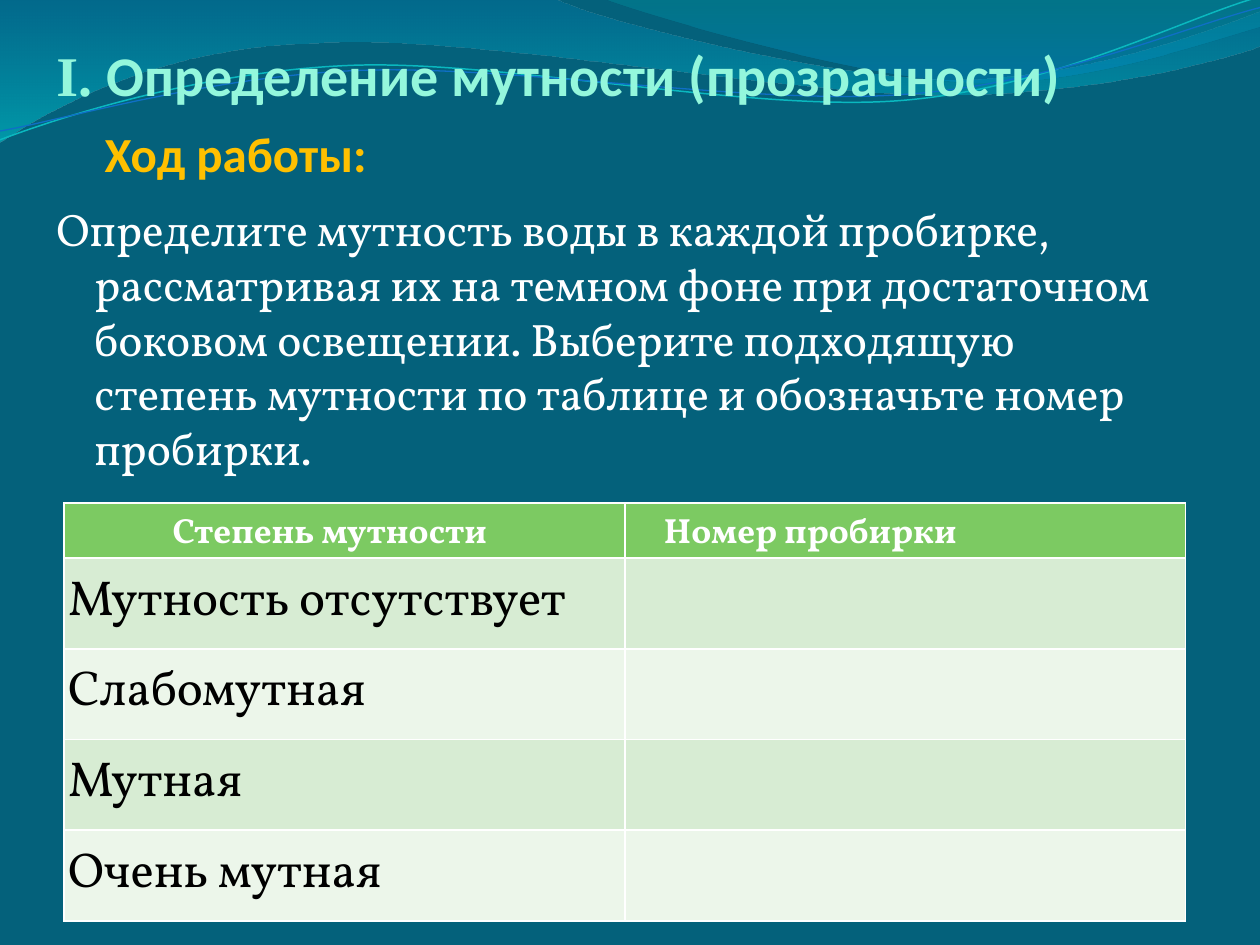
from lxml.etree import SubElement
from pptx import Presentation
from pptx.dml.color import RGBColor
from pptx.enum.text import MSO_ANCHOR as Anchor
from pptx.oxml import parse_xml
from pptx.oxml.ns import nsdecls, qn
from pptx.util import Inches, Pt

COLORS = {
    "background": "04617B", "white": "FFFFFF", "black": "000000",
    "mint": "94F7DC", "amber": "FFC000", "header": "7CCA62",
    "band_dark": "D7ECD3", "band_light": "ECF6EA",
    "wave_blue": "0074A1", "wave_cyan": "00C6CF",
    "wave_teal": "00A1A9", "wave_sky": "008BBF",
    "line_teal": "0AB8BF", "line_blue": "0F6FC6",
}
SERIF = "Vollkorn"
SANS = "Calibri"

LEFT_WAVE = [
    [(0, 0)], [(4.4, -0.01)],
    [(4.76, 0.17), (6.64, 0.63), (7.58, 0.63)],
    [(8.53, 0.63), (9.58, 0.26), (10, 0.09)],
    [(10.01, 0.36)],
    [(9.83, 0.44), (8.7, 0.76), (7.46, 0.75)],
    [(6.22, 0.75), (3.82, 0.28), (2.57, 0.34)],
    [(1.29, 0.36), (0.46, 0.83), (-0.01, 1.13)],
    [(0, 0)],
]
RIGHT_WAVE = [
    [(4.79, -0.01)],
    [(5.09, 0.11), (6.82, 0.62), (7.69, 0.65)],
    [(8.56, 0.69), (9.61, 0.32), (10, 0.21)],
    [(10, 0)], [(4.79, -0.01)],
]
TEAL_LINE = [
    [(0, 1.11)],
    [(0.48, 0.93), (1.58, 0.57), (2.77, 0.52)],
    [(3.95, 0.47), (5.93, 0.89), (7.13, 0.8)],
    [(8.33, 0.71), (9.38, 0.15), (9.98, -0.02)],
]
BLUE_LINE = [
    [(0, 1.04)],
    [(0.47, 0.96), (1.64, 0.61), (2.83, 0.56)],
    [(4.03, 0.51), (5.97, 0.84), (7.17, 0.75)],
    [(8.36, 0.67), (9.41, 0.21), (10, 0.06)],
]
INSTRUCTIONS = (
    "Определите мутность воды в каждой пробирке, рассматривая их на темном "
    "фоне при достаточном боковом освещении. Выберите подходящую степень "
    "мутности по таблице и обозначьте номер пробирки."
)
HEADERS = [("Степень мутности", 0.83), ("Номер пробирки", 0.28)]
DEGREES = ["Мутность отсутствует", "Слабомутная", "Мутная", "Очень мутная"]


def rgb(name):
    return RGBColor.from_string(COLORS[name])


def add_outline(slide, segments, close):
    start, *rest = [tuple(map(Inches, segment[-1])) for segment in segments]
    builder = slide.shapes.build_freeform(*start)
    builder.add_line_segments(rest, close=close)
    sp = builder.convert_to_shape()
    sp.shadow.inherit = False
    nodes = list(sp._element.spPr.iter(qn("a:lnTo")))
    for node, segment in zip(nodes, segments[1:]):
        if len(segment) == 3:
            node.tag = qn("a:cubicBezTo")
            for i, (x, y) in enumerate(segment[:2]):
                node.insert(i, parse_xml(
                    f'<a:pt {nsdecls("a")} x="{Inches(x) - sp.left}" '
                    f'y="{Inches(y) - sp.top}"/>'))
    return sp


def add_wave(slide, segments, stops):
    sp = add_outline(slide, segments, True)
    sp.line.fill.background()
    sp.fill.gradient()
    sp.fill.gradient_angle = 270
    for stop, (position, color, _) in zip(sp.fill.gradient_stops, stops):
        stop.position = position
        stop.color.rgb = rgb(color)
    for node, (_, _, opacity) in zip(sp._element.spPr.iter(qn("a:srgbClr")), stops):
        SubElement(node, qn("a:alpha")).set("val", str(opacity * 1000))


def add_wave_line(slide, segments, color, width):
    sp = add_outline(slide, segments, False)
    sp.fill.background()
    sp.line.color.rgb = rgb(color)
    sp.line.width = Pt(width)


def format_run(r, font, size, color, bold=False):
    r.font.name = font
    r.font.size = Pt(size)
    r.font.bold = bold
    r.font.color.rgb = rgb(color)


def set_indent(p, left, first=0):
    pPr = p._p.get_or_add_pPr()
    pPr.set("marL", str(Inches(left)))
    pPr.set("indent", str(Inches(first)))


def add_text(slide, box, text, font, size, color, bold=False, anchor=Anchor.TOP):
    sp = slide.shapes.add_textbox(*map(Inches, box))
    tf = sp.text_frame
    tf.word_wrap = True
    tf.vertical_anchor = anchor
    p = tf.paragraphs[0]
    p.text = text
    format_run(p.runs[0], font, size, color, bold)
    return tf


def fill_cell(cell, fill, text="", size=28, color="black", bold=False, indent=0):
    cell.fill.solid()
    cell.fill.fore_color.rgb = rgb(fill)
    if text:
        cell.margin_left = cell.margin_right = Inches(0.03)
        cell.margin_top = cell.margin_bottom = 0
        p = cell.text_frame.paragraphs[0]
        p.text = text
        p.line_spacing = 1.15
        set_indent(p, indent)
        format_run(p.runs[0], SERIF, size, color, bold)


def add_turbidity_table(slide):
    frame = slide.shapes.add_table(len(DEGREES) + 1, len(HEADERS), Inches(0.51),
                                   Inches(3.99), Inches(8.9), Inches(3.32))
    table = frame.table
    for i, row in enumerate(table.rows):
        row.height = Inches(0.72 if i else 0.44)
    for col, (text, indent) in enumerate(HEADERS):
        fill_cell(table.cell(0, col), "header", text, 20, "white", True, indent)
    for i, degree in enumerate(DEGREES, 1):
        band = "band_dark" if i % 2 else "band_light"
        fill_cell(table.cell(i, 0), band, degree)
        fill_cell(table.cell(i, 1), band)


def main():
    prs = Presentation()
    prs.slide_width, prs.slide_height = Inches(10), Inches(7.5)
    slide = prs.slides.add_slide(prs.slide_layouts[6])
    slide.background.fill.solid()
    slide.background.fill.fore_color.rgb = rgb("background")

    add_wave(slide, LEFT_WAVE, [(0, "wave_blue", 45), (1, "wave_cyan", 55)])
    add_wave(slide, RIGHT_WAVE, [(0, "wave_teal", 30), (0.8, "wave_sky", 45)])
    add_wave_line(slide, TEAL_LINE, "line_teal", 0.85)
    add_wave_line(slide, BLUE_LINE, "line_blue", 0.75)

    tf = add_text(slide, (0.83, 0.99, 4.49, 0.46), "Ход работы:", SANS, 28,
                  "amber", True, Anchor.BOTTOM)
    tf.margin_left = tf.margin_right = tf.margin_bottom = 0

    tf = add_text(slide, (0.35, 1.55, 9, 4.8), INSTRUCTIONS, SERIF, 26, "white")
    p = tf.paragraphs[0]
    p.space_before = Pt(5.2)
    set_indent(p, 0.3, -0.3)

    add_turbidity_table(slide)

    tf = add_text(slide, (0.35, 0.27, 9.37, 0.64), "I. ", "Times New Roman", 32,
                  "mint", True, Anchor.MIDDLE)
    r = tf.paragraphs[0].add_run()
    r.text = "Определение мутности (прозрачности)"
    format_run(r, SANS, 32, "mint", True)

    prs.save("out.pptx")


if __name__ == "__main__":
    main()
